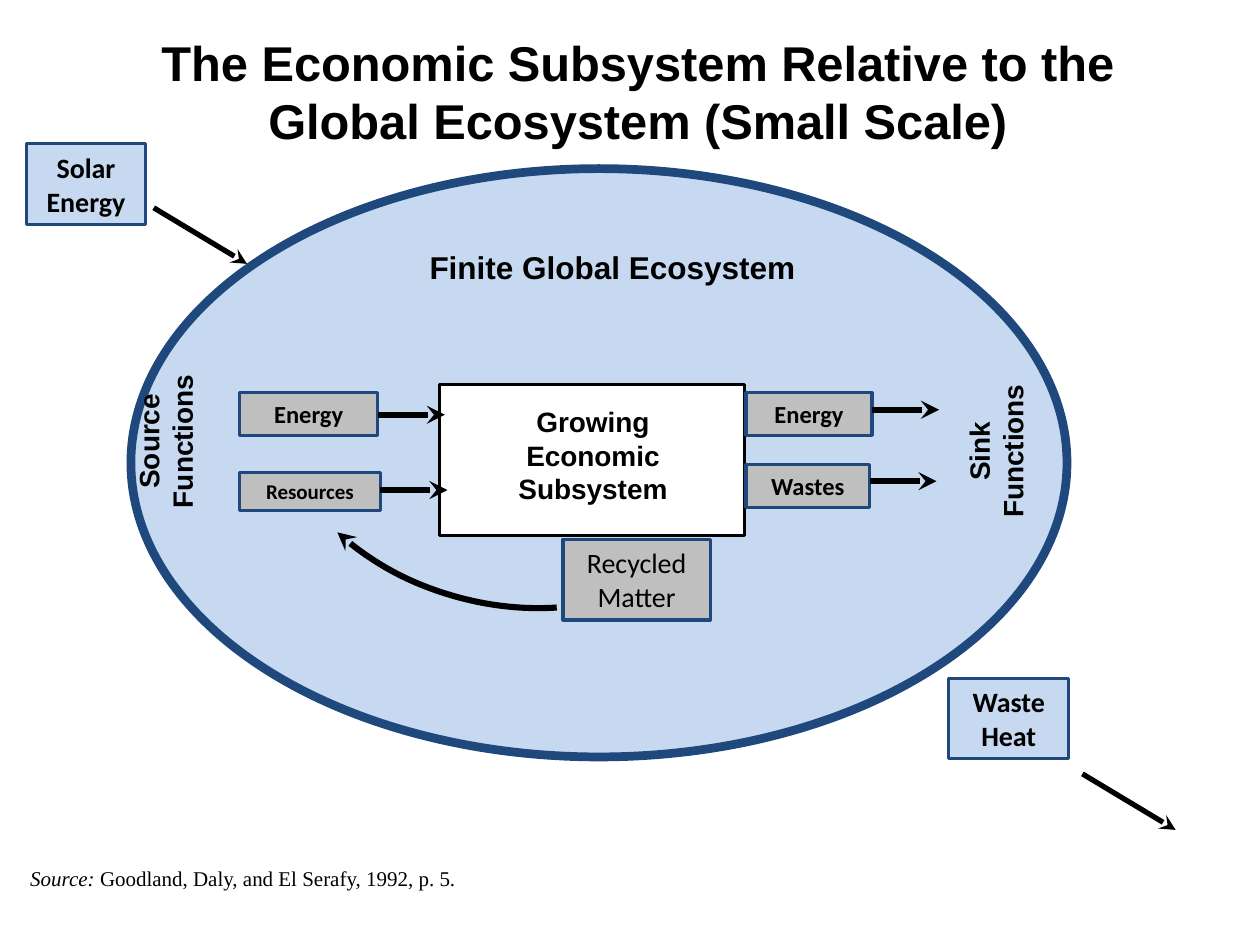
from typing import NamedTuple

from lxml.etree import SubElement
from pptx import Presentation
from pptx.dml.color import RGBColor
from pptx.enum.shapes import MSO_CONNECTOR, MSO_SHAPE
from pptx.enum.text import MSO_ANCHOR as Anchor, PP_ALIGN as Align
from pptx.oxml.ns import qn
from pptx.util import Cm, Pt

BLACK = RGBColor(0x00, 0x00, 0x00)
WHITE = RGBColor(0xFF, 0xFF, 0xFF)
NAVY = RGBColor(0x1F, 0x49, 0x7D)
SKY = RGBColor(0xC6, 0xD9, 0xF1)
GREY = RGBColor(0xBF, 0xBF, 0xBF)
FLOW_LENGTH = 1.35


class Box(NamedTuple):
    """A rectangle in centimetres."""
    left: float
    top: float
    width: float
    height: float

    def inner(self, dx, dy, width, height):
        return Box(self.left + dx, self.top + dy, width, height)

    def lengths(self):
        return [Cm(value) for value in self]


def write(frame, runs, size, font, bold=False, align=Align.CENTER):
    """Fill the frame with one paragraph of (text, italic) runs."""
    frame.word_wrap = True
    paragraph = frame.paragraphs[0]
    paragraph.alignment = align
    for text, italic in runs:
        run = paragraph.add_run()
        run.text = text
        run.font.name, run.font.size = font, Pt(size)
        run.font.bold, run.font.italic = bold, italic
        run.font.color.rgb = BLACK
    return paragraph


def add_label(slide, box, text, size, rotation=0, align=Align.CENTER):
    label = slide.shapes.add_textbox(*box.lengths())
    label.rotation = rotation
    return write(label.text_frame, [(text, False)], size, "Arial", True, align)


def add_outlined(slide, kind, box, fill, line, weight):
    shape = slide.shapes.add_shape(kind, *box.lengths())
    shape.shadow.inherit = False
    shape.fill.solid()
    shape.fill.fore_color.rgb = fill
    shape.line.color.rgb = line
    shape.line.width = Pt(weight)
    return shape


def add_stock(slide, box, text, size, fill, bold=True):
    stock = add_outlined(slide, MSO_SHAPE.RECTANGLE, box, fill, NAVY, 1.75)
    stock.text_frame.vertical_anchor = Anchor.MIDDLE
    write(stock.text_frame, [(text, False)], size, "Calibri", bold)


def style_arrow(shape, weight, end):
    shape.line.color.rgb = BLACK
    shape.line.width = Pt(weight)
    outline = shape._element.spPr.find(qn("a:ln"))
    SubElement(outline, qn(f"a:{end}"), type="stealth")


def add_arrow(slide, x, y, dx, dy, weight):
    arrow = slide.shapes.add_connector(
        MSO_CONNECTOR.STRAIGHT, Cm(x), Cm(y), Cm(x + dx), Cm(y + dy))
    style_arrow(arrow, weight, "tailEnd")
    SubElement(arrow._element.spPr, qn("a:effectLst"))


def add_title(slide, box):
    title = add_label(
        slide, box, "The Economic Subsystem Relative to the "
        "Global Ecosystem (Small Scale)", 27.9)
    title.line_spacing = Pt(33)


def add_ecosystem(slide, box):
    add_outlined(slide, MSO_SHAPE.OVAL, box, SKY, NAVY, 5)
    add_label(slide, box.inner(5.77, 1.48, 7.9, 1.02),
              "Finite Global Ecosystem", 18, align=Align.LEFT)
    add_label(slide, box.inner(-0.99, 4.68, 3.38, 1.63),
              "Source Functions", 16, rotation=270)
    add_label(slide, box.inner(15.75, 4.88, 3.38, 1.63),
              "Sink Functions", 16, rotation=270)


def add_economy(slide, box):
    """The economic subsystem with its inputs, outputs and recycling loop."""
    add_outlined(slide, MSO_SHAPE.RECTANGLE, box, WHITE, BLACK, 1.5)
    add_label(slide, box.inner(0.87, 0.28, 4.45, 3),
              "Growing Economic Subsystem", 16)
    flows = [  # text, size, offset and size of the box, drop of the arrow
        ("Energy", 14, (-4.03, 0.17, 2.79, 0.86), 0.44),
        ("Resources", 12, (-4.03, 1.78, 2.84, 0.76), 0.35),
        ("Energy", 14, (6.18, 0.17, 2.54, 0.86), 0.34),
        ("Wastes", 14, (6.18, 1.62, 2.49, 0.86), 0.33),
    ]
    for text, size, place, drop in flows:
        stock = box.inner(*place)
        add_stock(slide, stock, text, size, GREY)
        add_arrow(slide, stock.left + stock.width, stock.top + drop,
                  FLOW_LENGTH, 0, 3.5)
    add_stock(slide, box.inner(2.49, 3.12, 2.97, 1.63),
              "Recycled Matter", 16, GREY, bold=False)
    add_recycling_arc(slide, box.inner(-3.55, -3.08, 9.73, 7.49))


def add_recycling_arc(slide, box):
    arc = slide.shapes.add_shape(MSO_SHAPE.ARC, *box.lengths())
    arc.shadow.inherit = False
    arc.fill.background()
    arc.adjustments[0], arc.adjustments[1] = 138.47, 180.97
    arc.rotation = 16.3
    arc._element.spPr.find(qn("a:xfrm")).set("flipV", "1")
    style_arrow(arc, 3.5, "headEnd")


def add_outside_energy(slide, box, text, dx, dy):
    """An energy box outside the ecosystem, its arrow starting at dx, dy."""
    add_stock(slide, box, text, 16, SKY)
    add_arrow(slide, box.left + dx, box.top + dy, 1.88, 1.13, 3)


def add_source(slide, box):
    note = slide.shapes.add_textbox(*box.lengths())
    write(note.text_frame,
          [("Source: ", True),
           ("Goodland, Daly, and El Serafy, 1992, p. 5.", False)],
          12, "Times New Roman", align=Align.LEFT)


def main():
    deck = Presentation()
    deck.slide_width, deck.slide_height = Cm(25.4), Cm(19.05)
    slide = deck.slides.add_slide(deck.slide_layouts[6])
    add_ecosystem(slide, Box(2.64, 3.4, 18.87, 11.86))
    add_economy(slide, Box(8.86, 7.75, 6.15, 3.05))
    add_outside_energy(slide, Box(0.53, 2.9, 2.41, 1.63),
                       "Solar Energy", 2.57, 1.29)
    add_outside_energy(slide, Box(19.13, 13.67, 2.41, 1.63),
                       "Waste Heat", 2.69, 1.93)
    add_title(slide, Box(1.47, 0.56, 22.78, 2.6))
    add_source(slide, Box(0.36, 17.32, 9.32, 1.55))
    deck.save("out.pptx")


if __name__ == "__main__":
    main()
